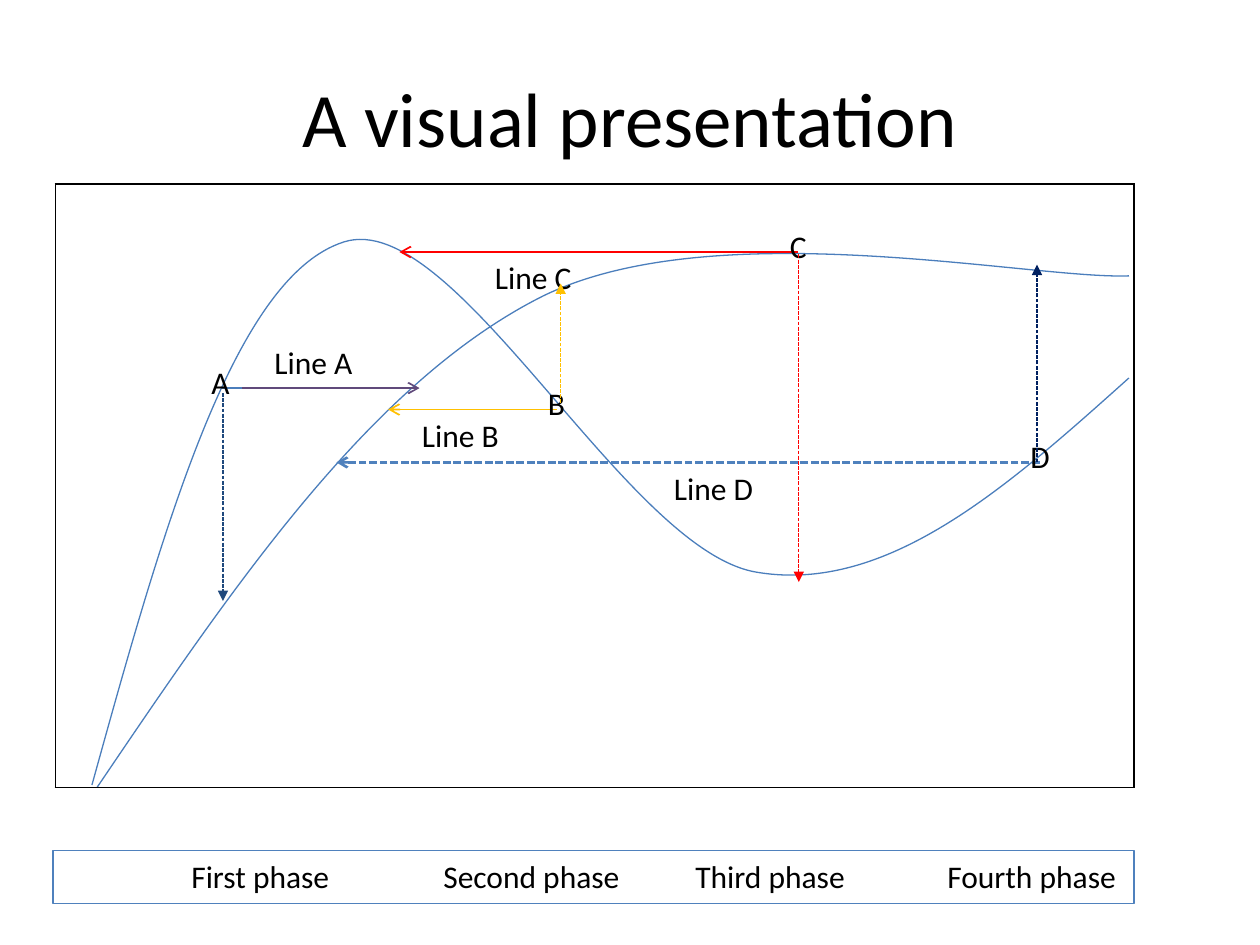
from dataclasses import dataclass

from lxml import etree
from pptx import Presentation
from pptx.dml.color import RGBColor
from pptx.enum.dml import MSO_LINE
from pptx.enum.shapes import MSO_CONNECTOR, MSO_SHAPE
from pptx.enum.text import MSO_ANCHOR, MSO_AUTO_SIZE, PP_ALIGN
from pptx.oxml.ns import qn
from pptx.util import Pt

PX = 9144
STRAIGHT = MSO_CONNECTOR.STRAIGHT
RECTANGLE = MSO_SHAPE.RECTANGLE
DASHED = MSO_LINE.SQUARE_DOT
TOP, MIDDLE = MSO_ANCHOR.TOP, MSO_ANCHOR.MIDDLE
LEFT, CENTER = PP_ALIGN.LEFT, PP_ALIGN.CENTER
GROW = MSO_AUTO_SIZE.SHAPE_TO_FIT_TEXT


@dataclass(frozen=True)
class Theme:
    font: str = "Calibri"
    title_size: int = 44
    body_size: int = 18
    ink: str = "000000"
    curve: str = "4B7EBC"
    blue: str = "4F81BD"
    navy: str = "002060"
    dark_blue: str = "1F497D"
    purple: str = "604A7B"
    gold: str = "FFC000"
    red: str = "FF0000"


THEME = Theme()

TITLE_BOX = (50, 30, 900, 125)
DIAGRAM_BOX = (44, 146, 856, 479)
PHASE_BOX = (42, 675, 858, 42)

CURVES = [
    [(29, 477), (85, 275), (141, 74), (229, 46), (317, 18), (452, 290),
     (556, 308), (660, 326), (756, 240), (852, 154)],
    [(33, 479), (142, 318), (251, 157), (387, 89), (524, 22), (775, 76), (852, 73)],
]

HORIZONTALS = [
    ((781, 221), (223, 221), THEME.blue, 1.5, True, "arrow"),
    ((139, 162), (289, 162), THEME.purple, 1, False, "arrow"),
    ((148, 162), (131, 162), THEME.curve, 0.75, False, None),
    ((398, 179), (264, 179), THEME.gold, 1, False, "arrow"),
    ((589, 54), (273, 54), THEME.red, 1, False, "arrow"),
]

VERTICALS = [
    ((133, 166), (133, 331), THEME.dark_blue, 0.75, True, "triangle"),
    ((401, 174), (401, 79), THEME.gold, 0.75, True, "triangle"),
    ((590, 56), (590, 316), THEME.red, 0.75, True, "triangle"),
    ((779, 221), (779, 64), THEME.navy, 0.75, True, "triangle"),
]

LABELS = [
    ("Line A", 164, 121, 100),
    ("Line B", 281, 179, 88),
    ("Line C", 339, 54, 82),
    ("Line D", 481, 221, 84),
    ("A", 114, 137, 35),
    ("B", 381, 154, 34),
    ("C", 573, 29, 34),
    ("D", 764, 196, 36),
]

PHASES = ["First phase", "Second phase", "Third phase", "Fourth phase"]


def emu(*lengths):
    return [length * PX for length in lengths]


def write(frame, text, size=THEME.body_size, align=LEFT, anchor=TOP, wrap=True, grow=True):
    frame.word_wrap = wrap
    frame.vertical_anchor = anchor
    if grow:
        frame.auto_size = GROW
    paragraph = frame.paragraphs[0]
    paragraph.alignment = align
    run = paragraph.add_run()
    run.text = text
    run.font.name = THEME.font
    run.font.size = Pt(size)
    run.font.color.rgb = RGBColor.from_string(THEME.ink)
    return paragraph


def stroke(line, color, width):
    line.color.rgb = RGBColor.from_string(color)
    line.width = Pt(width)


def draw_curves(slide, box):
    for start, *controls in CURVES:
        builder = slide.shapes.build_freeform(*start, scale=PX)
        builder.add_line_segments(controls, close=False)
        curve = builder.convert_to_shape(*emu(*box[:2]))
        curve.fill.background()
        curve.shadow.inherit = False
        stroke(curve.line, THEME.curve, 0.75)
        segments = curve._element.findall(".//" + qn("a:lnTo"))
        outline = segments[0].getparent()
        for first in range(0, len(segments), 3):
            bezier = etree.SubElement(outline, qn("a:cubicBezTo"))
            for segment in segments[first:first + 3]:
                bezier.append(segment[0])
                outline.remove(segment)


def draw_title(slide, box):
    title = slide.shapes.add_textbox(*emu(*box))
    write(title.text_frame, "A visual presentation", size=THEME.title_size,
          align=CENTER, anchor=MIDDLE, grow=False)


def draw_frame(slide, box):
    table = slide.shapes.add_table(1, 1, *emu(*box)).table
    table.first_row = False
    table.horz_banding = False
    cell = table.cell(0, 0)
    properties = cell._tc.get_or_add_tcPr()
    for side in ("lnL", "lnR", "lnT", "lnB"):
        border = etree.SubElement(properties, qn("a:" + side), w=str(Pt(1)))
        fill = etree.SubElement(border, qn("a:solidFill"))
        etree.SubElement(fill, qn("a:srgbClr"), val=THEME.ink)
    cell.fill.background()


def draw_arrows(slide, box, arrows):
    left, top = box[:2]
    for (x1, y1), (x2, y2), color, width, dashed, head in arrows:
        arrow = slide.shapes.add_connector(
            STRAIGHT, *emu(left + x1, top + y1, left + x2, top + y2))
        stroke(arrow.line, color, width)
        if dashed:
            arrow.line.dash_style = DASHED
        if head:
            etree.SubElement(arrow.line._get_or_add_ln(), qn("a:tailEnd"), type=head)
        etree.SubElement(arrow._element.spPr, qn("a:effectLst"))


def draw_labels(slide, box):
    left, top = box[:2]
    for text, x, y, width in LABELS:
        label = slide.shapes.add_textbox(*emu(left + x, top + y, width, 40))
        write(label.text_frame, text, wrap=False)


def draw_phases(slide, box):
    bar = slide.shapes.add_shape(RECTANGLE, *emu(*box))
    bar.fill.background()
    bar.shadow.inherit = False
    stroke(bar.line, THEME.blue, 0.75)
    paragraph = write(bar.text_frame, "".join("\t" + phase for phase in PHASES))
    stops = etree.SubElement(paragraph._p.get_or_add_pPr(), qn("a:tabLst"))
    for index in range(len(PHASES)):
        etree.SubElement(stops, qn("a:tab"), pos=str((100 + 200 * index) * PX), algn="l")


def main():
    presentation = Presentation()
    presentation.slide_width, presentation.slide_height = emu(1000, 750)
    slide = presentation.slides.add_slide(presentation.slide_layouts[6])
    draw_curves(slide, DIAGRAM_BOX)
    draw_title(slide, TITLE_BOX)
    draw_frame(slide, DIAGRAM_BOX)
    draw_phases(slide, PHASE_BOX)
    draw_arrows(slide, DIAGRAM_BOX, HORIZONTALS)
    draw_labels(slide, DIAGRAM_BOX)
    draw_arrows(slide, DIAGRAM_BOX, VERTICALS)
    presentation.save("out.pptx")


if __name__ == "__main__":
    main()
